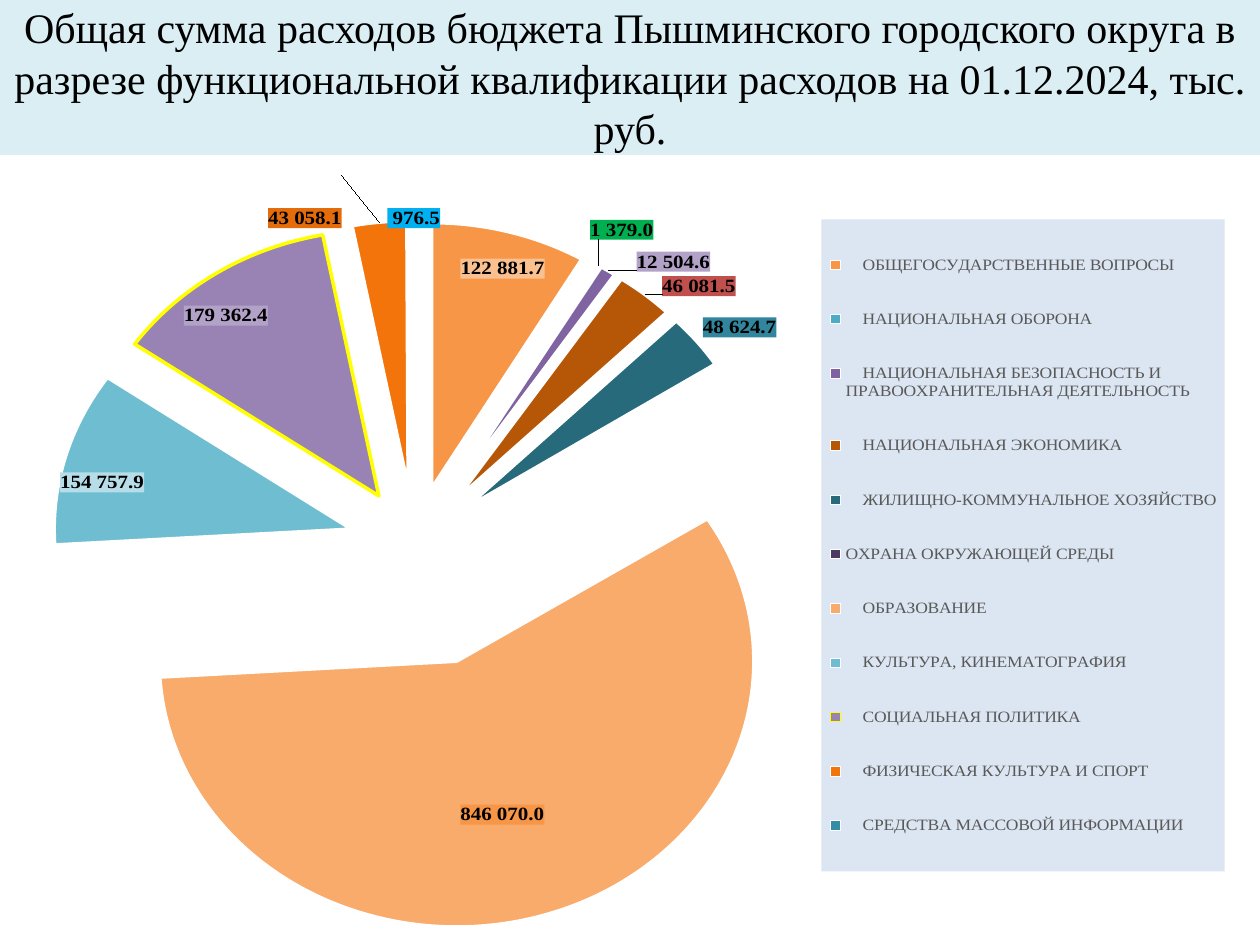
"""Build a slide with an exploded pie chart of municipal budget spending."""
from pptx import Presentation
from pptx.chart.data import CategoryChartData
from pptx.dml.color import RGBColor
from pptx.enum.chart import XL_CHART_TYPE, XL_LEGEND_POSITION
from pptx.enum.text import MSO_ANCHOR, MSO_AUTO_SIZE, PP_ALIGN
from pptx.oxml import parse_xml
from pptx.oxml.ns import nsdecls
from pptx.util import Inches, Pt

PIE, RIGHT = XL_CHART_TYPE.PIE, XL_LEGEND_POSITION.RIGHT
CENTER, MIDDLE, NO_FIT = PP_ALIGN.CENTER, MSO_ANCHOR.MIDDLE, MSO_AUTO_SIZE.NONE
SERIF = "Times New Roman"
BLACK = RGBColor(0x00, 0x00, 0x00)
WHITE = RGBColor(0xFF, 0xFF, 0xFF)
GREY = RGBColor(0x59, 0x59, 0x59)
PALE_TEAL = RGBColor(0xDB, 0xEE, 0xF4)
PALE_BLUE = RGBColor(0xDC, 0xE6, 0xF2)
YELLOW = RGBColor(0xFF, 0xFF, 0x00)
NUMBER_FORMAT = r"#\ ##0.0"
INDENT = " " * 4
CHART_W, CHART_H = 9.8, 5.98
PIE_BOX = (0.93, 0.63, 4.72, 4.72)
LEGEND_BOX = (6.52, 0.1, 3.2, 5.79)
EXPLOSION = 22

TITLE = ("Общая сумма расходов бюджета Пышминского городского округа в разрезе "
         "функциональной квалификации расходов на 01.12.2024, тыс. руб.")
OUTLINED = "СОЦИАЛЬНАЯ ПОЛИТИКА"
FLUSH = "ОХРАНА ОКРУЖАЮЩЕЙ СРЕДЫ"
EDUCATION = "ОБРАЗОВАНИЕ"
WIDER_EXPLOSION = {EDUCATION: 46}
# name, value, slice colour, label (fill, position, dx, dy)
SPENDING = [
    ("ОБЩЕГОСУДАРСТВЕННЫЕ ВОПРОСЫ", 122881.7, "F79646", ("FAC090", "inEnd", 0.03, 0.03)),
    ("НАЦИОНАЛЬНАЯ ОБОРОНА", 1379, "4BACC6", ("00B050", "outEnd", -0.01, -0.03)),
    ("НАЦИОНАЛЬНАЯ БЕЗОПАСНОСТЬ И ПРАВООХРАНИТЕЛЬНАЯ ДЕЯТЕЛЬНОСТЬ", 12504.6, "8064A2",
     ("B3A2C7", "outEnd", 0.02, 0.01)),
    ("НАЦИОНАЛЬНАЯ ЭКОНОМИКА", 46081.5, "B65708", ("C0504D", "outEnd", 0.01, 0.01)),
    ("ЖИЛИЩНО-КОММУНАЛЬНОЕ ХОЗЯЙСТВО", 48624.7, "276A7C", ("31859C", "outEnd", 0, 0)),
    (FLUSH, 1501.5, "4D3B62", None),
    (EDUCATION, 846070, "F9AB6B", ("F79646", "ctr", 0, 0.04)),
    ("КУЛЬТУРА, КИНЕМАТОГРАФИЯ", 154757.9, "6FBDD1", ("B7DEE8", "inEnd", -0.01, 0.02)),
    (OUTLINED, 179362.4, "9983B5", ("B3A2C7", "inEnd", -0.03, 0.04)),
    ("ФИЗИЧЕСКАЯ КУЛЬТУРА И СПОРТ", 43058.1, "F3740B", ("E46C0A", "outEnd", -0.03, -0.06)),
    ("СРЕДСТВА МАССОВОЙ ИНФОРМАЦИИ", 976.5, "358EA6", ("00B0F0", "outEnd", 0, 0)),
]


def format_font(font, size, color, name=SERIF, bold=False):
    font.size, font.name, font.bold = Pt(size), name, bold
    font.color.rgb = color


def add_text(tf, text, align=CENTER, **font):
    p = tf.paragraphs[0]
    p.alignment = align
    r = p.add_run()
    r.text = text
    format_font(r.font, **font)


def layout_xml(parts):
    return f'<c:layout {nsdecls("c")}><c:manualLayout>{parts}</c:manualLayout></c:layout>'


def box_xml(box, target=""):
    sizes = zip("xywh", box, (CHART_W, CHART_H) * 2)
    values = "".join(f'<c:{key} val="{part / whole:.4f}"/>' for key, part, whole in sizes)
    return layout_xml(f'{target}<c:xMode val="edge"/><c:yMode val="edge"/>{values}')


def fill_xml(color):
    return f'<c:spPr {nsdecls("c", "a")}><a:solidFill><a:srgbClr val="{color}"/></a:solidFill></c:spPr>'


def labels_xml():
    number = f'<c:numFmt formatCode="{NUMBER_FORMAT}" sourceLinked="0"/>'
    text = ('<c:txPr><a:bodyPr/><a:p><a:pPr><a:defRPr sz="1200" b="1"><a:solidFill>'
            f'<a:srgbClr val="{BLACK}"/></a:solidFill><a:latin typeface="{SERIF}"/>'
            '</a:defRPr></a:pPr><a:endParaRPr lang="ru-RU"/></a:p></c:txPr>')
    shows = "".join(f'<c:show{key} val="{int(key == "Val")}"/>' for key in
                    ("LegendKey", "Val", "CatName", "SerName", "Percent", "BubbleSize"))
    items = ""
    for i, (*_, label) in enumerate(SPENDING):
        body = '<c:delete val="1"/>'
        if label:
            color, position, dx, dy = label
            shift = layout_xml(f'<c:x val="{dx}"/><c:y val="{dy}"/>') if dx or dy else ""
            body = shift + number + fill_xml(color) + text
            body += f'<c:dLblPos val="{position}"/>{shows}'
        items += f'<c:dLbl><c:idx val="{i}"/>{body}</c:dLbl>'
    return (f'<c:dLbls {nsdecls("c", "a")}>{items}{number}{text}<c:dLblPos val="bestFit"/>'
            f'{shows}<c:showLeaderLines val="1"/></c:dLbls>')


def set_layout(element, xml, after=None):
    for old in element.xpath("c:layout"):
        element.remove(old)
    if after is None:
        element.insert(0, parse_xml(xml))
    else:
        after.addnext(parse_xml(xml))


def add_title(s):
    sp = s.shapes.title
    sp.left, sp.top, sp.width, sp.height = 0, 0, Inches(10), Inches(1.23)
    sp.fill.solid()
    sp.fill.fore_color.rgb = PALE_TEAL
    tf = sp.text_frame
    tf.word_wrap, tf.auto_size, tf.vertical_anchor = True, NO_FIT, MIDDLE
    add_text(tf, TITLE, size=24, color=BLACK)


def add_pie(s):
    data = CategoryChartData(number_format=NUMBER_FORMAT)
    data.categories = [name if name == FLUSH else INDENT + name for name, *_ in SPENDING]
    data.add_series("Series 1", [row[1] for row in SPENDING])
    frame = s.shapes.add_chart(PIE, 0, Inches(1.39), Inches(CHART_W), Inches(CHART_H), data)
    chart = frame.chart
    chart.has_title = False
    format_font(chart.font, 10, BLACK, name="Calibri")
    chart.has_legend = True
    legend = chart.legend
    legend.position, legend.include_in_layout = RIGHT, False
    format_font(legend.font, 10, GREY)

    plot = chart.plots[0]
    plot.vary_by_categories = True
    series = plot.series[0]
    for i, (name, _, color, _) in enumerate(SPENDING):
        look = series.points[i].format
        look.fill.solid()
        look.fill.fore_color.rgb = RGBColor.from_string(color)
        look.line.color.rgb = YELLOW if name == OUTLINED else WHITE
        look.line.width = Pt(2)
    ser = series._element
    for dpt, (name, *_) in zip(ser.xpath("c:dPt"), SPENDING):
        for old in dpt.xpath("c:explosion"):
            dpt.remove(old)
        explosion = WIDER_EXPLOSION.get(name, EXPLOSION)
        dpt.xpath("c:spPr")[0].addprevious(
            parse_xml(f'<c:explosion {nsdecls("c")} val="{explosion}"/>'))
    ser.xpath("c:cat")[0].addprevious(parse_xml(labels_xml()))

    plot_area = ser.xpath("ancestor::c:plotArea")[0]
    set_layout(plot_area, box_xml(PIE_BOX, '<c:layoutTarget val="inner"/>'))
    box = plot_area.xpath("../c:legend")[0]
    set_layout(box, box_xml(LEGEND_BOX), after=box.xpath("c:legendPos")[0])
    box.xpath("c:txPr")[0].addprevious(parse_xml(fill_xml(PALE_BLUE)))


def main():
    prs = Presentation()
    prs.slide_width, prs.slide_height = Inches(10), Inches(7.5)
    s = prs.slides.add_slide(prs.slide_layouts[5])
    add_title(s)
    add_pie(s)
    prs.save("out.pptx")


if __name__ == "__main__":
    main()
